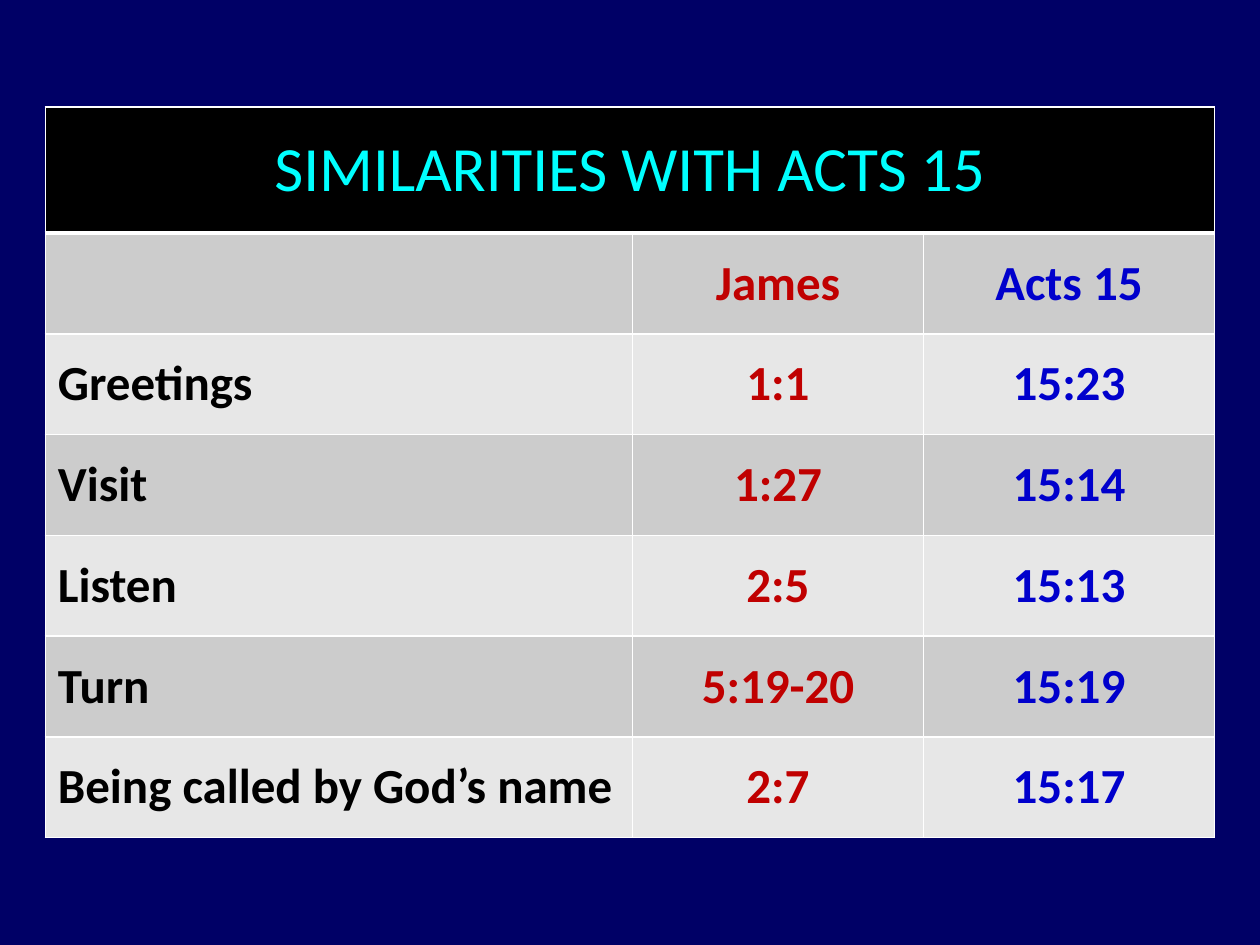
from lxml.etree import SubElement
from pptx import Presentation
from pptx.dml.color import RGBColor
from pptx.enum.text import MSO_ANCHOR, PP_ALIGN
from pptx.oxml.ns import qn
from pptx.util import Inches, Pt

HEADING = "SIMILARITIES WITH ACTS 15"
PASSAGES = [
    ("", "James", "Acts 15"),
    ("Greetings", "1:1", "15:23"),
    ("Visit", "1:27", "15:14"),
    ("Listen", "2:5", "15:13"),
    ("Turn", "5:19-20", "15:19"),
    ("Being called by God’s name", "2:7", "15:17"),
]
COLUMN_STYLES = [
    ("000000", PP_ALIGN.LEFT),
    ("C00000", PP_ALIGN.CENTER),
    ("0000CC", PP_ALIGN.CENTER),
]
BANDS = ["CCCCCC", "E7E7E7"]
COLUMN_WIDTHS = [4.66, 2.31, 2.31]
HEADING_HEIGHT = 1


def paint(fill, color):
    """Give a fill one solid hex colour."""
    fill.solid()
    fill.fore_color.rgb = RGBColor.from_string(color)


def add_border(cell, side, points):
    """Draw a white line on one side of a cell."""
    line = SubElement(cell._tc.get_or_add_tcPr(), qn(f"a:ln{side}"), w=str(Pt(points)))
    SubElement(SubElement(line, qn("a:solidFill")), qn("a:srgbClr"), val="FFFFFF")


def style_cell(cell, background, top=1, bottom=1):
    """Set the borders, fill and anchor of a cell."""
    for side, points in (("L", 1), ("R", 1), ("T", top), ("B", bottom)):
        add_border(cell, side, points)
    paint(cell.fill, background)
    cell.vertical_anchor = MSO_ANCHOR.MIDDLE


def write_cell(cell, text, size, color, align, bold):
    """Write one run of text in a cell."""
    paragraph = cell.text_frame.paragraphs[0]
    paragraph.alignment = align
    run = paragraph.add_run()
    run.text = text
    run.font.name = "Calibri"
    run.font.size = Pt(size)
    run.font.bold = bold
    paint(run.font.fill, color)


def add_passage_table(slide, left, top, width, height):
    """Place the table of parallel passages in the given box."""
    table = slide.shapes.add_table(
        len(PASSAGES) + 1, len(COLUMN_WIDTHS),
        Inches(left), Inches(top), Inches(width), Inches(height),
    ).table
    for column, column_width in zip(table.columns, COLUMN_WIDTHS):
        column.width = Inches(column_width)
    passage_height = (height - HEADING_HEIGHT) / len(PASSAGES)
    for index, row in enumerate(table.rows):
        row.height = Inches(passage_height if index else HEADING_HEIGHT)

    heading = table.cell(0, 0)
    heading.merge(table.cell(0, len(COLUMN_WIDTHS) - 1))
    for cell in table.rows[0].cells:
        style_cell(cell, "000000", bottom=3)
    write_cell(heading, HEADING, 36, "00FFFF", PP_ALIGN.CENTER, False)

    for index, passage in enumerate(PASSAGES):
        for column, (text, (color, align)) in enumerate(zip(passage, COLUMN_STYLES)):
            cell = table.cell(index + 1, column)
            style_cell(cell, BANDS[index % 2], top=1 if index else 3)
            if text:
                write_cell(cell, text, 28, color, align, True)


def main():
    """Build and save the slide."""
    deck = Presentation()
    deck.slide_width, deck.slide_height = Inches(10), Inches(7.5)
    slide = deck.slides.add_slide(deck.slide_layouts[6])
    paint(slide.background.fill, "000066")
    add_passage_table(slide, 0.36, 0.85, sum(COLUMN_WIDTHS), 5.8)
    deck.save("out.pptx")


if __name__ == "__main__":
    main()
